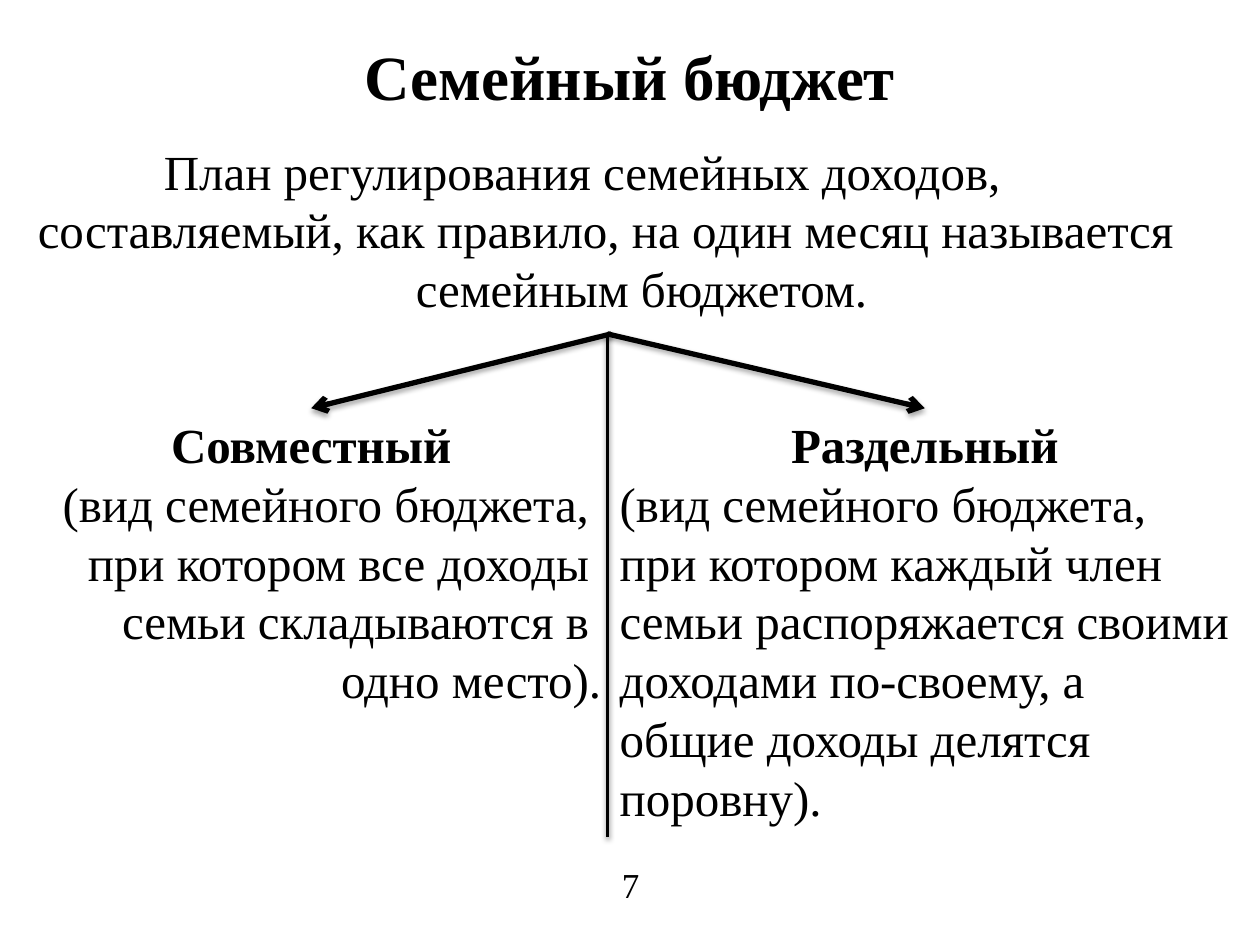
import pptx
import pptx.util
import pptx.dml.color
import pptx.enum.shapes
import pptx.enum.text
import pptx.oxml
import pptx.oxml.ns

Inches = pptx.util.Inches
Pt = pptx.util.Pt
ALIGN = pptx.enum.text.PP_ALIGN
BLACK = pptx.dml.color.RGBColor(0, 0, 0)
FONT = "Times New Roman"


def add_text(frame, text, size=28, bold=False, align=ALIGN.LEFT, before=0,
             margin=0, indent=0):
    """Write one paragraph without a bullet, reusing an empty first one."""
    paragraph = frame.paragraphs[0]
    if paragraph.runs:
        paragraph = frame.add_paragraph()
    properties = paragraph._p.get_or_add_pPr()
    properties.set("marL", str(Inches(margin)))
    properties.set("indent", str(Inches(indent)))
    properties.append(pptx.oxml.parse_xml(
        f"<a:buNone {pptx.oxml.ns.nsdecls('a')}/>"))
    paragraph.alignment = align
    paragraph.space_before = Pt(before)
    run = paragraph.add_run()
    run.text = text
    run.font.name = FONT
    run.font.size = Pt(size)
    run.font.bold = bold
    run.font.color.rgb = BLACK


def add_line(start, end, width, alpha, distance, arrow=False):
    """Draw a black line with a soft shadow below it."""
    line = slide.shapes.add_connector(
        pptx.enum.shapes.MSO_CONNECTOR.STRAIGHT,
        *(Inches(value) for value in start + end))
    line.line.width = Pt(width)
    line.line.color.rgb = BLACK
    namespace = pptx.oxml.ns.nsdecls("a")
    if arrow:
        line.line._get_or_add_ln().append(pptx.oxml.parse_xml(
            f'<a:tailEnd {namespace} type="arrow"/>'))
    line._element.spPr.append(pptx.oxml.parse_xml(
        f'<a:effectLst {namespace}><a:outerShdw blurRad="{Pt(3.1)}" '
        f'dist="{Pt(distance)}" dir="5400000" rotWithShape="0">'
        f'<a:srgbClr val="{BLACK}"><a:alpha val="{alpha * 1000}"/>'
        '</a:srgbClr></a:outerShdw></a:effectLst>'))


presentation = pptx.Presentation()
presentation.slide_width = Inches(10)
presentation.slide_height = Inches(7.5)
slide = presentation.slides.add_slide(presentation.slide_layouts[1])

# Title
title = slide.shapes.title
title.left, title.top = Inches(0.5), Inches(0.13)
title.width, title.height = Inches(9), Inches(0.94)
add_text(title.text_frame, "Семейный бюджет", size=36, bold=True,
         align=ALIGN.CENTER)

# Definition, with the page number at the foot
body = slide.placeholders[1]
body.left, body.top = Inches(0.2), Inches(1.07)
body.width, body.height = Inches(9.61), Inches(6.38)
body.text_frame.auto_size = pptx.enum.text.MSO_AUTO_SIZE.NONE
add_text(body.text_frame,
         "План регулирования семейных доходов, составляемый, "
         "как правило, на один месяц называется", indent=1)
add_text(body.text_frame, "семейным бюджетом.", margin=3)
add_text(body.text_frame, "7", size=20, align=ALIGN.CENTER, before=312)

# Arrows to the two kinds of budget
for start, end in (((4.85, 2.65), (2.47, 3.24)), ((4.82, 2.65), (7.34, 3.24))):
    add_line(start, end, width=3, alpha=35, distance=1.8, arrow=True)

# Two kinds of budget
columns = (
    (0.07, 4.8, 2.93, "Совместный", ALIGN.RIGHT,
     ("(вид семейного бюджета, ", "при котором все доходы ",
      "семьи складываются в ", "одно место).")),
    (4.82, 5.04, 3.4, "Раздельный", ALIGN.LEFT,
     ("(вид семейного бюджета, при котором каждый член семьи распоряжается "
      "своими доходами по-своему, а общие доходы делятся поровну).",)),
)
for left, width, height, heading, align, lines in columns:
    box = slide.shapes.add_textbox(Inches(left), Inches(3.24), Inches(width),
                                   Inches(height))
    box.text_frame.word_wrap = True
    add_text(box.text_frame, heading, bold=True, align=ALIGN.CENTER)
    for text in lines:
        add_text(box.text_frame, text, align=align)

# Divider between the columns
add_line((4.82, 2.65), (4.82, 6.64), width=2, alpha=38, distance=1.6)

presentation.save("out.pptx")
